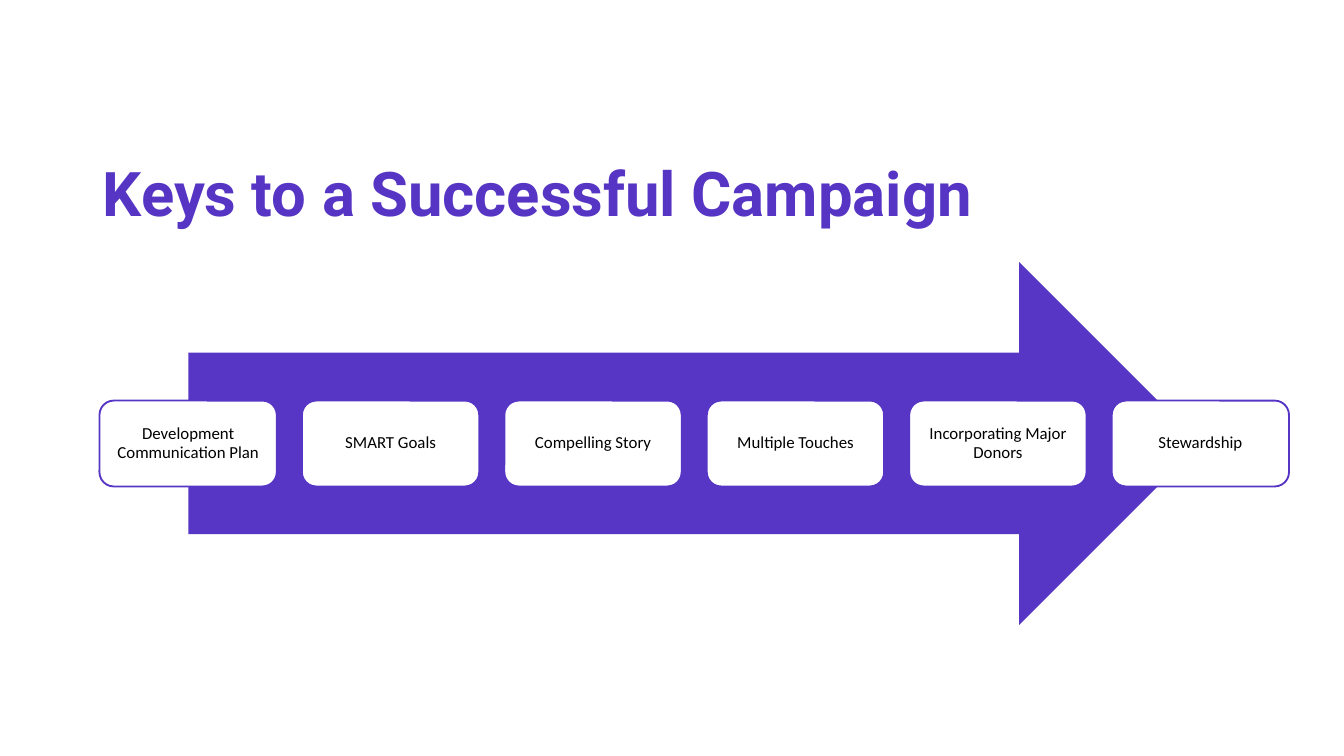
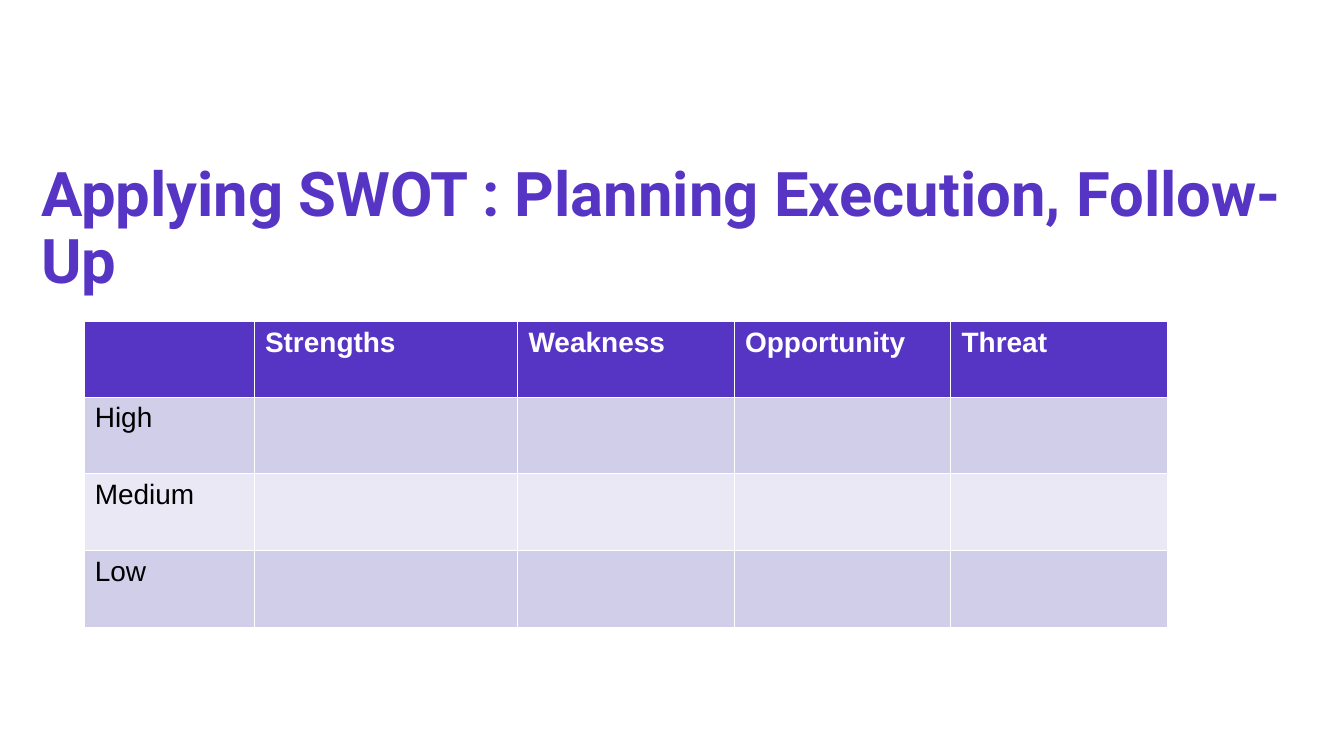
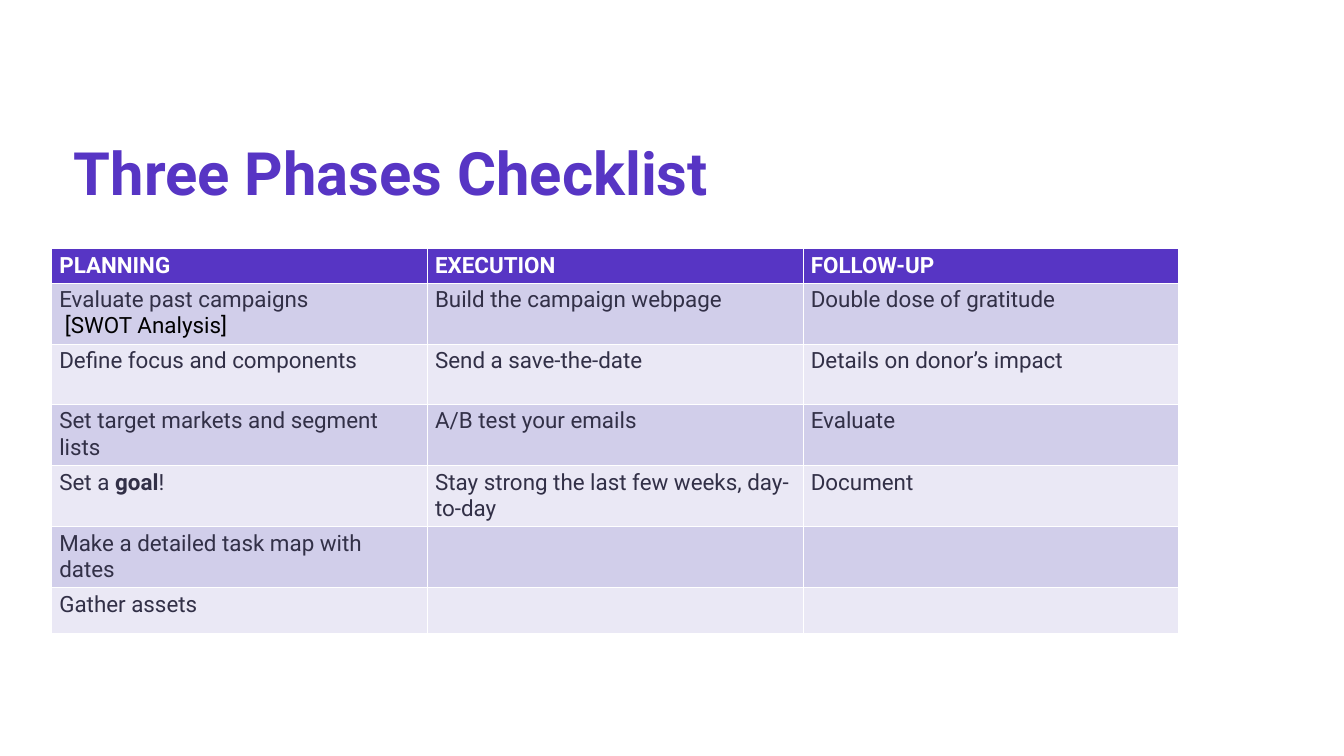
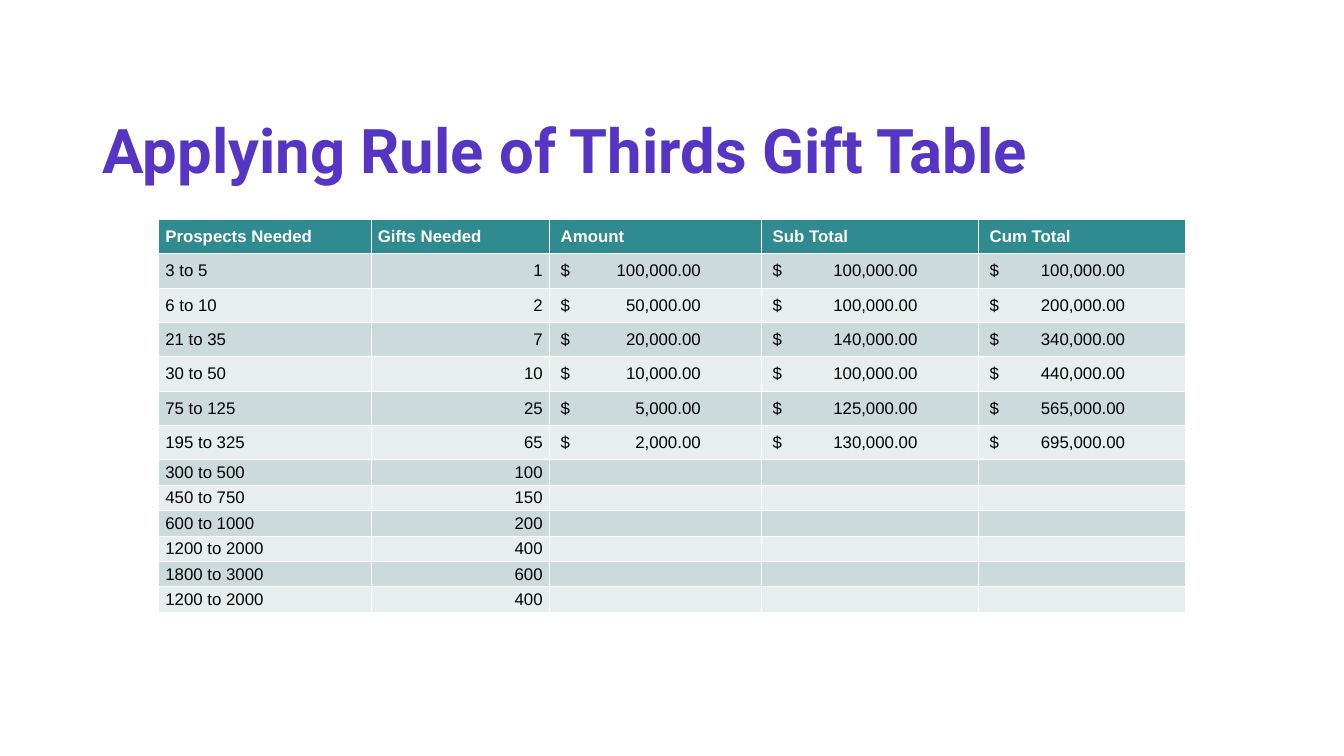
from itertools import accumulate
from pptx import Presentation
from pptx.dml.color import RGBColor
from pptx.enum.shapes import MSO_SHAPE as Preset
from pptx.enum.text import MSO_ANCHOR as Anchor, PP_ALIGN as Align
from pptx.oxml.ns import qn
from pptx.util import Pt
from lxml.etree import SubElement

# Shared look
PURPLE, ARROW_PURPLE, WHITE, BLACK, INK = "5735C4", "5736C5", "FFFFFF", "000000", "323047"
PURPLE_BANDS = (PURPLE, "D1CEEA", "EAE8F5")  # header, odd rows, even rows
TEAL_BANDS = ("2F8B90", "CDDADB", "E8EEEE")
TITLE = {"name": "Roboto", "size": 33, "bold": True, "color": PURPLE}
TITLE_HEIGHT = 42.5

# Slide 1: steps along the arrow
KEYS_TITLE = "Keys to a Successful Campaign"
STEPS = ["Development Communication Plan", "SMART Goals", "Compelling Story",
         "Multiple Touches", "Incorporating Major Donors", "Stewardship"]

# Slide 2: empty grid to fill in
SWOT_TITLE = "Applying SWOT : Planning Execution, Follow-Up"
SWOT = [["", "Strengths", "Weakness", "Opportunity", "Threat"]]
SWOT += [[level, "", "", "", ""] for level in ("High", "Medium", "Low")]

# Slide 3: a cell is a string, or a list of paragraphs made of (text, format) runs
PHASES_TITLE = "Three Phases Checklist"
EVALUATE_PAST = [[("Evaluate past campaigns", {})],
                 [(" [SWOT Analysis]", {"color": BLACK})]]
SET_GOAL = [[("Set a ", {}), ("goal", {"bold": True}), ("!", {})]]
PHASES = [
    ["PLANNING", "EXECUTION", "FOLLOW-UP"],
    [EVALUATE_PAST, "Build the campaign webpage", "Double dose of gratitude"],
    ["Define focus and components", "Send a save-the-date", "Details on donor’s impact"],
    ["Set target markets and segment lists", "A/B test your emails", "Evaluate"],
    [SET_GOAL, "Stay strong the last few weeks, day-to-day", "Document"],
    ["Make a detailed task map with dates", "", ""],
    ["Gather assets", "", ""],
]

# Slide 4: prospects, gifts, amount of each gift
GIFTS_TITLE = "Applying Rule of Thirds Gift Table"
GIFT_HEADER = ["Prospects Needed", "Gifts Needed", "Amount", "Sub Total", "Cum Total"]
PRICED_GIFTS = [("3 to 5", 1, 100000), ("6 to 10", 2, 50000), ("21 to 35", 7, 20000),
                ("30 to 50", 10, 10000), ("75 to 125", 25, 5000), ("195 to 325", 65, 2000)]
OPEN_GIFTS = [("300 to 500", 100), ("450 to 750", 150), ("600 to 1000", 200),
              ("1200 to 2000", 400), ("1800 to 3000", 600), ("1200 to 2000", 400)]


def rgb(value):
    return RGBColor.from_string(value)


def set_margins(target, left, top):
    margins = {"margin_left": left, "margin_right": left, "margin_top": top, "margin_bottom": top}
    for name, value in margins.items():
        setattr(target, name, Pt(value))


def add_run(paragraph, text, look):
    run = paragraph.add_run()
    run.text = text
    for name, value in look.items():
        if name == "color":
            run.font.color.rgb = rgb(value)
        else:
            setattr(run.font, name, Pt(value) if name == "size" else value)


def add_title(slide, text, left, top, width, size=33, spacing=0.9, margins=(5.4, 2.7)):
    frame = slide.shapes.add_textbox(Pt(left), Pt(top), Pt(width), Pt(TITLE_HEIGHT)).text_frame
    frame.word_wrap = True
    set_margins(frame, *margins)
    frame.paragraphs[0].line_spacing = spacing
    add_run(frame.paragraphs[0], text, TITLE | {"size": size})


def add_preset(slide, preset, box, fill):
    shape = slide.shapes.add_shape(preset, *map(Pt, box))
    shape.shadow.inherit = False
    shape.fill.solid()
    shape.fill.fore_color.rgb = rgb(fill)
    return shape


def add_borders(cell):
    properties = cell._tc.get_or_add_tcPr()
    for place, side in enumerate(("lnL", "lnR", "lnT", "lnB")):
        border = SubElement(properties, qn(f"a:{side}"), w=str(Pt(0.6)))
        SubElement(SubElement(border, qn("a:solidFill")), qn("a:srgbClr"), val=WHITE)
        properties.remove(border)
        properties.insert(place, border)  # borders come before the fill


def fill_cell(cell, content, look):
    paragraphs = [[(content, {})]] if isinstance(content, str) else content
    frame = cell.text_frame
    for index, runs in enumerate(paragraphs):
        paragraph = frame.add_paragraph() if index else frame.paragraphs[0]
        for text, changes in runs:
            if text:
                add_run(paragraph, text, look | changes)
            else:  # keeps an empty row from growing
                SubElement(paragraph._p, qn("a:endParaRPr"), sz=str(look["size"] * 100))


def add_grid(slide, rows, left, top, widths, heights, bands, look, margins, ink=BLACK):
    table = slide.shapes.add_table(len(rows), len(widths), Pt(left), Pt(top),
                                   Pt(sum(widths)), Pt(sum(heights))).table
    for column, width in zip(table.columns, widths):
        column.width = Pt(width)
    for r, (row, height) in enumerate(zip(rows, heights)):
        table.rows[r].height = Pt(height)
        row_look = look | {"bold": r == 0, "color": ink if r else WHITE}
        band = bands[0] if r == 0 else bands[2 - r % 2]
        for c, content in enumerate(row):
            cell = table.cell(r, c)
            set_margins(cell, *margins)
            cell.fill.solid()
            cell.fill.fore_color.rgb = rgb(band)
            add_borders(cell)
            fill_cell(cell, content, row_look)
    return table


def build_keys(slide):
    add_title(slide, KEYS_TITLE, 49.7, 85, 620.6)
    arrow = add_preset(slide, Preset.RIGHT_ARROW, (101, 140.4, 542.2, 194.4), ARROW_PURPLE)
    arrow.line.fill.background()
    left, pitch, width, height = 53.3, 108.45, 95, 46
    for index, step in enumerate(STEPS):
        box = (left + index * pitch, 214.6, width, height)
        card = add_preset(slide, Preset.ROUNDED_RECTANGLE, box, WHITE)
        card.line.color.rgb = rgb(ARROW_PURPLE)
        card.line.width = Pt(1)
        frame = card.text_frame
        frame.word_wrap = True
        frame.vertical_anchor = Anchor.MIDDLE
        set_margins(frame, 5, 5)
        frame.paragraphs[0].alignment = Align.CENTER
        frame.paragraphs[0].line_spacing = 0.9
        add_run(frame.paragraphs[0], step, {"name": "Calibri", "size": 9, "color": BLACK})


def build_swot(slide):
    add_title(slide, SWOT_TITLE, 16.6, 85, 682.6)
    add_grid(slide, SWOT, 45, 172.5, [91.2, 141.2] + [116] * 3, [40.2] + [41.2] * 3,
             PURPLE_BANDS, {"name": "Arial", "size": 15}, (5.8, 2.9))


def build_phases(slide):
    add_grid(slide, PHASES, 27.7, 133.3, [201.3] * 3, [17.8] + [32.1] * 5 + [24.6],
             PURPLE_BANDS, {"name": "Roboto", "size": 12}, (4.1, 2), INK)
    add_title(slide, PHASES_TITLE, 32.4, 69.1, 465.8, 32, 1.0, (7.2, 3.6))


def build_gifts(slide):
    add_title(slide, GIFTS_TITLE, 49.7, 62, 620.6)
    subtotals = [gifts * amount for _, gifts, amount in PRICED_GIFTS]
    rows = [GIFT_HEADER]
    for (prospects, gifts, amount), *totals in zip(PRICED_GIFTS, subtotals, accumulate(subtotals)):
        rows.append([prospects, str(gifts)] + [f"$\t{sum_:,.2f}" for sum_ in (amount, *totals)])
    rows += [[prospects, str(gifts), "", "", ""] for prospects, gifts in OPEN_GIFTS]
    table = add_grid(slide, rows, 85, 117.5, [113.8, 95.5, 113.6, 116.2, 110.9],
                     [18.4] * 7 + [13.65] * 6, TEAL_BANDS, {"name": "Arial", "size": 9}, (3.6, 1.4))
    tab_stops = {2: 75, 3: 77.5, 4: 72.5}  # right edges of the sums
    for r in range(len(rows)):
        for c in range(len(GIFT_HEADER)):
            cell = table.cell(r, c)
            cell.vertical_anchor = Anchor.MIDDLE
            paragraph = cell.text_frame.paragraphs[0]
            if c == 1 and r:
                paragraph.alignment = Align.RIGHT
            if c in tab_stops:
                cell.margin_left = Pt(6.1)
                if "\t" in rows[r][c]:
                    tabs = SubElement(paragraph._p.get_or_add_pPr(), qn("a:tabLst"))
                    SubElement(tabs, qn("a:tab"), pos=str(Pt(tab_stops[c])), algn="r")


def main():
    deck = Presentation()
    deck.slide_width, deck.slide_height = Pt(720), Pt(405)
    for build in (build_keys, build_swot, build_phases, build_gifts):
        build(deck.slides.add_slide(deck.slide_layouts[6]))
    deck.save("out.pptx")


if __name__ == "__main__":
    main()
